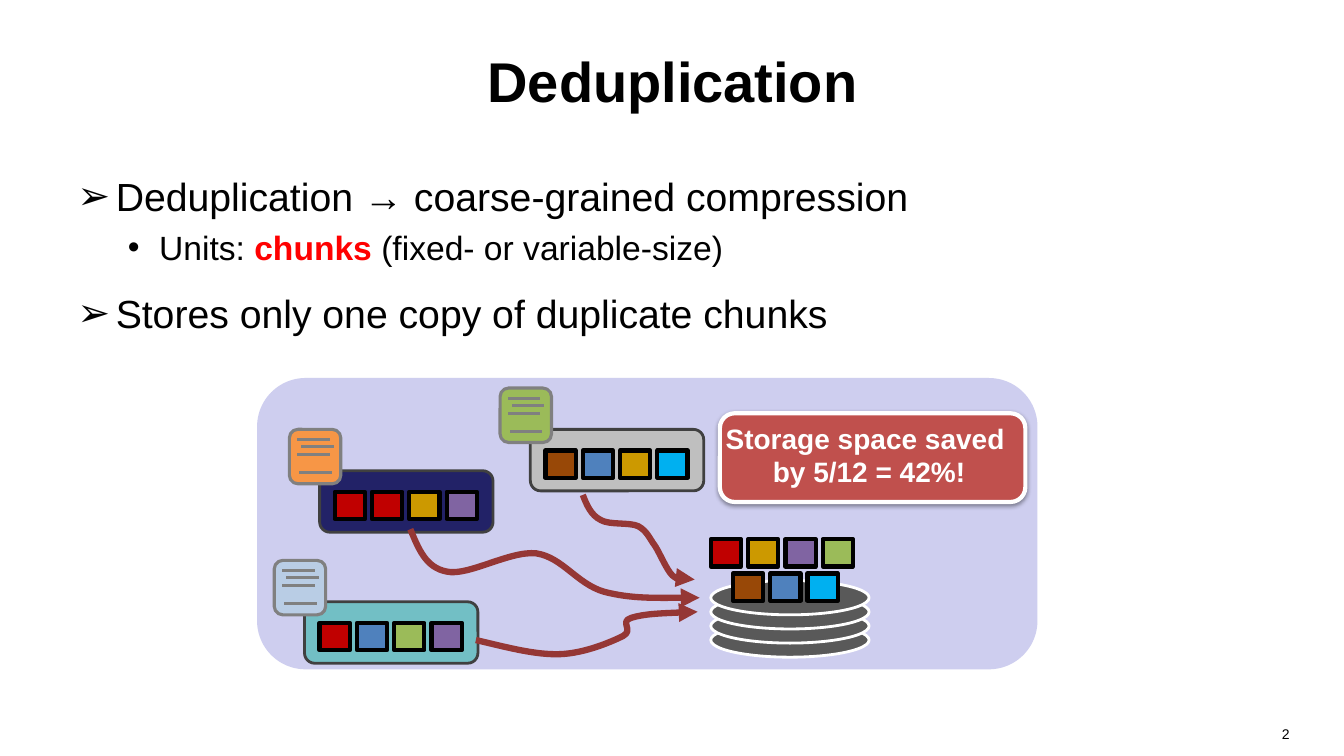
from lxml import etree
from pptx import Presentation
from pptx.dml.color import RGBColor
from pptx.enum import shapes, text
from pptx.oxml import ns
from pptx.util import Inches, Pt

BLACK = RGBColor(0x00, 0x00, 0x00)
WHITE = RGBColor(0xFF, 0xFF, 0xFF)
RED = RGBColor(0xFF, 0x00, 0x00)
PANEL = RGBColor(0xCE, 0xCE, 0xEF)
CARD_EDGE = RGBColor(0x40, 0x40, 0x40)
ICON_EDGE = RGBColor(0x80, 0x80, 0x80)
DISK = RGBColor(0x59, 0x59, 0x59)
ARROW = RGBColor(0x95, 0x37, 0x35)
CALLOUT = RGBColor(0xC0, 0x50, 0x4D)
TEAL = RGBColor(0x72, 0xBF, 0xC5)
NAVY = RGBColor(0x22, 0x22, 0x67)
SILVER = RGBColor(0xBF, 0xBF, 0xBF)
PALE_BLUE = RGBColor(0xB9, 0xCD, 0xE5)
ORANGE = RGBColor(0xF7, 0x96, 0x46)
CRIMSON = RGBColor(0xC0, 0x00, 0x00)
BLUE = RGBColor(0x4F, 0x81, 0xBD)
GREEN = RGBColor(0x9B, 0xBB, 0x59)
PURPLE = RGBColor(0x80, 0x64, 0xA2)
GOLD = RGBColor(0xCC, 0x99, 0x00)
BROWN = RGBColor(0x98, 0x48, 0x07)
SKY = RGBColor(0x00, 0xB0, 0xF0)

RECT = shapes.MSO_SHAPE.RECTANGLE
ROUNDED = shapes.MSO_SHAPE.ROUNDED_RECTANGLE
ELLIPSE = shapes.MSO_SHAPE.OVAL
LEFT, CENTER, RIGHT = text.PP_ALIGN.LEFT, text.PP_ALIGN.CENTER, text.PP_ALIGN.RIGHT

# File icon corner, icon colour, card colour, chunk colours; offsets from the panel
FILES = [
    (0.17, 1.81, PALE_BLUE, TEAL, [CRIMSON, BLUE, GREEN, PURPLE]),
    (0.32, 0.51, ORANGE, NAVY, [CRIMSON, CRIMSON, GOLD, PURPLE]),
    (2.41, 0.10, GREEN, SILVER, [BROWN, BLUE, GOLD, SKY]),
]
# Start point, then two control points and an end point for each bend
FLOWS = [
    [(1.52, 1.5), (1.6, 1.69), (1.67, 1.88), (1.88, 1.92), (2.09, 1.97), (2.51, 1.71), (2.77, 1.74),
     (3.03, 1.78), (3.17, 2.04), (3.44, 2.12), (3.71, 2.19), (4.05, 2.18), (4.39, 2.18)],
    [(2.17, 2.6), (2.47, 2.67), (2.76, 2.75), (3.01, 2.74), (3.25, 2.73), (3.51, 2.62), (3.63, 2.56),
     (3.74, 2.5), (3.59, 2.42), (3.71, 2.38), (3.84, 2.34), (4.1, 2.33), (4.37, 2.32)],
    [(3.23, 1.16), (3.27, 1.26), (3.31, 1.36), (3.41, 1.41), (3.5, 1.46), (3.69, 1.43), (3.78, 1.47),
     (3.87, 1.52), (3.89, 1.59), (3.95, 1.67), (4, 1.75), (4.06, 1.9), (4.12, 1.96),
     (4.19, 2.01), (4.27, 2), (4.34, 2)],
]
BULLETS = [
    ("➢", 0.38, -0.38, 16, 28, [("Deduplication → coarse-grained compression", {})]),
    ("•", 0.81, -0.31, 5.5, 24, [("Units: ", {}), ("chunks ", {"color": RED, "bold": True}),
                                 ("(fixed- or variable-size)", {})]),
    ("➢", 0.38, -0.38, 16, 28, [("Stores only one copy of duplicate chunks", {})]),
]


def add_span(para, words, size, color=BLACK, bold=False):
    span = para.add_run()
    span.text = words
    for name, value in {"name": "Arial", "size": Pt(size), "bold": bold}.items():
        setattr(span.font, name, value)
    span.font.color.rgb = color


def add_text_box(parent, left, top, width, height, lines=(), align=LEFT,
                 anchor=text.MSO_ANCHOR.TOP, **style):
    box = parent.add_textbox(Inches(left), Inches(top), Inches(width), Inches(height))
    frame = box.text_frame
    frame.word_wrap = True
    frame.vertical_anchor = anchor
    for number, words in enumerate(lines):
        para = frame.add_paragraph() if number else frame.paragraphs[0]
        para.alignment = align
        add_span(para, words, **style)
    return frame


def add_body(page, left, top, width, height):
    frame = add_text_box(page.shapes, left, top, width, height)
    for number, (mark, margin, indent, before, size, spans) in enumerate(BULLETS):
        para = frame.add_paragraph() if number else frame.paragraphs[0]
        para.space_before = Pt(before)
        for words, style in spans:
            add_span(para, words, size, **style)
        # Bullet and hanging indent
        props = para._p.get_or_add_pPr()
        props.set("marL", str(Inches(margin)))
        props.set("indent", str(Inches(indent)))
        etree.SubElement(props, ns.qn("a:buFont"), typeface="Arial")
        etree.SubElement(props, ns.qn("a:buChar"), char=mark)


def add_block(parent, kind, left, top, width, height, fill, edge=None, weight=0):
    block = parent.add_shape(kind, Inches(left), Inches(top), Inches(width), Inches(height))
    block.fill.solid()
    block.fill.fore_color.rgb = fill
    if edge is None:
        block.line.fill.background()
    else:
        block.line.color.rgb = edge
        block.line.width = Pt(weight)
    block.shadow.inherit = False
    return block


def add_chunks(parent, left, top, colors):
    for column, color in enumerate(colors):
        add_block(parent, RECT, left + 0.37 * column, top, 0.3, 0.27, color, BLACK, 3)


def add_file(parent, left, top, icon, card, chunks):
    add_block(parent, ROUNDED, left + 0.3, top + 0.41, 1.72, 0.61, card, CARD_EDGE, 2)
    add_chunks(parent, left + 0.45, top + 0.62, chunks)
    add_block(parent, ROUNDED, left, top, 0.51, 0.54, icon, ICON_EDGE, 2.25)
    # Lines of writing on the icon
    for x, y in [(0.08, 0.1), (0.12, 0.17), (0.08, 0.25), (0.1, 0.43)]:
        stroke = parent.add_connector(
            shapes.MSO_CONNECTOR.STRAIGHT, Inches(left + x), Inches(top + y),
            Inches(left + x + 0.32), Inches(top + y))
        stroke.line.color.rgb = ICON_EDGE
        stroke.line.width = Pt(2.25)
        etree.SubElement(stroke.element.spPr, ns.qn("a:effectLst"))


def add_store(parent, left, top):
    for layer in range(3, -1, -1):
        add_block(parent, ELLIPSE, left, top + 0.41 + 0.14 * layer, 1.57, 0.34, DISK, WHITE, 2)
    add_chunks(parent, left, top, [CRIMSON, GOLD, PURPLE, GREEN])
    add_chunks(parent, left + 0.22, top + 0.34, [BROWN, BLUE, SKY])


def add_flow(parent, left, top, points):
    start, *rest = [(Inches(left + x), Inches(top + y)) for x, y in points]
    builder = parent.build_freeform(*start)
    builder.add_line_segments(rest, close=False)
    flow = builder.convert_to_shape()
    flow.fill.background()
    flow.line.color.rgb = ARROW
    flow.line.width = Pt(4.5)
    flow.shadow.inherit = False
    # Each three points become one Bézier bend
    outline = flow.element.find(".//" + ns.qn("a:path"))
    steps = outline.findall(ns.qn("a:lnTo"))
    for first in range(0, len(steps), 3):
        bend = etree.SubElement(outline, ns.qn("a:cubicBezTo"))
        for step in steps[first:first + 3]:
            bend.append(step[0])
            outline.remove(step)
    edge = flow.element.spPr.find(ns.qn("a:ln"))
    etree.SubElement(edge, ns.qn("a:tailEnd"), type="triangle")


def add_callout(parent, left, top, width, height):
    callout = add_block(parent, ROUNDED, left, top, width, height, CALLOUT, WHITE, 3)
    effects = callout.element.spPr.find(ns.qn("a:effectLst"))
    shadow = etree.SubElement(effects, ns.qn("a:outerShdw"), blurRad=str(Pt(3.1)),
                              dist=str(Pt(1.6)), dir="5400000", rotWithShape="0")
    tint = etree.SubElement(shadow, ns.qn("a:srgbClr"), val=str(BLACK))
    etree.SubElement(tint, ns.qn("a:alpha"), val="38000")


def add_diagram(page, left, top, width, height):
    parent = page.shapes.add_group_shape().shapes
    add_block(parent, ROUNDED, left, top, width, height, PANEL)
    for x, y, *colors in FILES:
        add_file(parent, left + x, top + y, *colors)
    add_store(parent, left + 4.5, top + 1.6)
    add_callout(parent, left + 4.59, top + 0.35, 3.03, 0.88)
    for points in FLOWS:
        add_flow(parent, left, top, points)
    add_text_box(parent, left + 3.91, top + 0.38, 4.32, 0.77,
                 ["Storage space saved ", "by 5/12 = 42%!"], CENTER,
                 size=20, color=WHITE, bold=True)


def main():
    deck = Presentation()
    deck.slide_width, deck.slide_height = Inches(13.33), Inches(7.5)
    page = deck.slides.add_slide(deck.slide_layouts[6])
    # Title, bullets, page number, diagram
    add_text_box(page.shapes, 0.67, 0.17, 12, 1.25, ["Deduplication"], CENTER,
                 text.MSO_ANCHOR.MIDDLE, size=40, bold=True)
    add_body(page, 0.67, 1.66, 12, 2)
    add_text_box(page.shapes, 9.78, 7.15, 3.11, 0.35, ["2"], RIGHT, size=10)
    add_diagram(page, 2.55, 3.75, 7.74, 2.89)
    deck.save("out.pptx")


if __name__ == "__main__":
    main()
